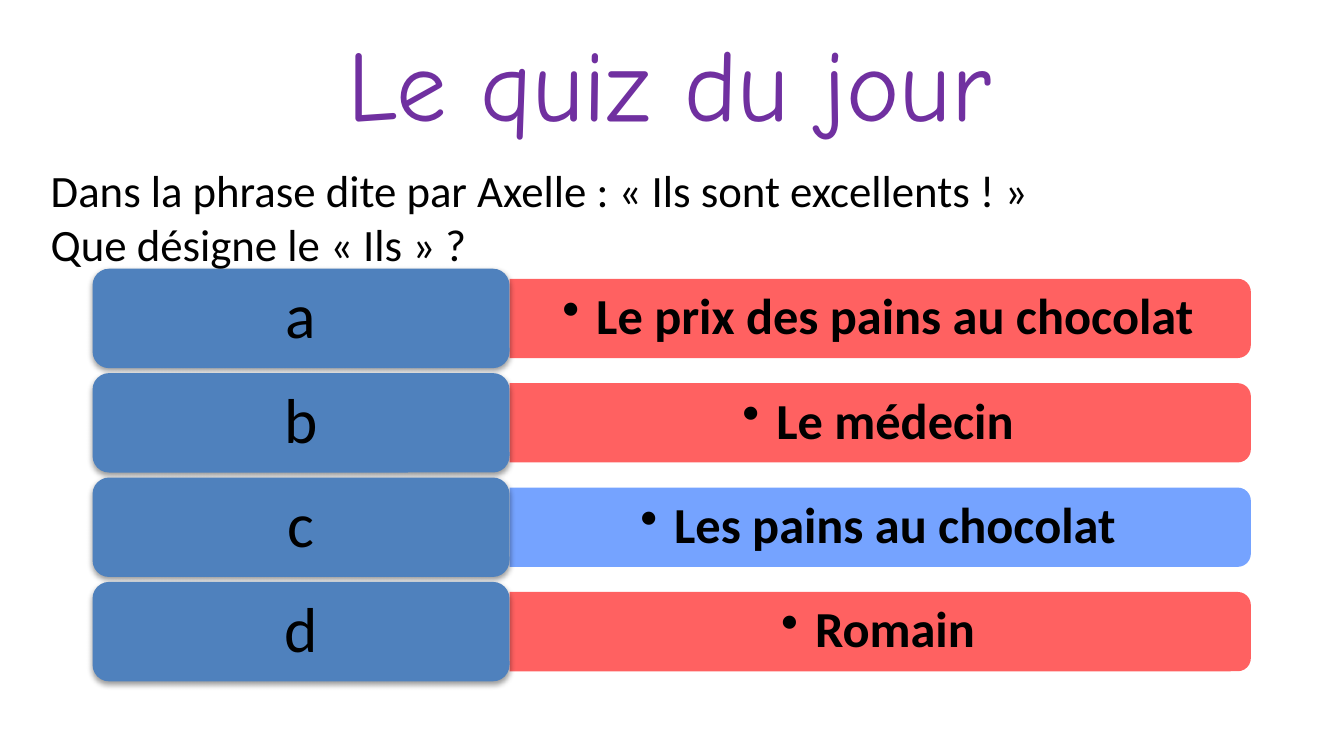
from lxml import etree
from pptx import Presentation
from pptx.dml.color import RGBColor
from pptx.enum.shapes import MSO_SHAPE
from pptx.enum.text import MSO_ANCHOR, PP_ALIGN
from pptx.oxml.ns import qn
from pptx.util import Cm, Pt

CARD, BAR = MSO_SHAPE.ROUNDED_RECTANGLE, MSO_SHAPE.ROUND_2_SAME_RECTANGLE
MIDDLE, TOP = MSO_ANCHOR.MIDDLE, MSO_ANCHOR.TOP
CENTER, LEFT = PP_ALIGN.CENTER, PP_ALIGN.LEFT
COLORS = {"title": "7030A0", "text": "000000", "card": "4F81BD",
          "wrong": "FF5050", "right": "6699FF", "shadow": "000000"}
TITLE = {"name": "Comic Neue", "size": Pt(54)}
QUESTION = {"name": "Calibri", "size": Pt(24)}
LETTER = {"name": "Calibri", "size": Pt(34)}
ANSWER = {"name": "Calibri", "size": Pt(27), "bold": True}
ANSWERS = [("a", "Le prix des pains au chocolat", "wrong"),
           ("b", "Le médecin", "wrong"),
           ("c", "Les pains au chocolat", "right"),
           ("d", "Romain", "wrong")]


def add_child(parent, tag, **attrs):
    """Append a drawing element with the given attributes."""
    return etree.SubElement(parent, qn(tag), {k: str(v) for k, v in attrs.items()})


def write(sp, lines, fmt, color="text", align=CENTER, anchor=MIDDLE, spacing=1.0):
    """Fill a shape with formatted lines and return its paragraphs."""
    tf = sp.text_frame
    tf.word_wrap, tf.vertical_anchor = True, anchor
    tf.text = "\n".join(lines)
    for p in tf.paragraphs:
        p.alignment, p.line_spacing = align, spacing
        font = p.runs[0].font
        font.color.rgb = RGBColor.from_string(COLORS[color])
        for name, value in fmt.items():
            setattr(font, name, value)
    return tf.paragraphs


def add_text(slide, box, lines, fmt, **options):
    """Add a text box, box being left, top, width and height in cm."""
    return write(slide.shapes.add_textbox(*map(Cm, box)), lines, fmt, **options)


def add_block(slide, kind, box, color):
    """Add a plain filled shape without outline or shadow."""
    sp = slide.shapes.add_shape(kind, *map(Cm, box))
    sp.shadow.inherit = False
    sp.fill.solid()
    sp.fill.fore_color.rgb = RGBColor.from_string(COLORS[color])
    sp.line.fill.background()
    return sp


def add_bar(slide, box, text, color):
    """Add an answer bar rounded on its right side, with a bulleted answer."""
    x, y, w, h = box
    sp = add_block(slide, BAR, (x + (w - h) / 2, y + (h - w) / 2, h, w), color)
    sp.rotation = 90
    add_child(sp.fill.fore_color._xFill[0], "a:alpha", val=90000)
    p = add_text(slide, (x, y + 0.08, w - 0.08, h - 0.16), [text], ANSWER, spacing=0.9)[0]
    pPr = p._p.get_or_add_pPr()
    pPr.set("marL", str(Cm(0.64)))
    pPr.set("indent", str(-Cm(0.64)))
    add_child(pPr, "a:buChar", char="•")


def add_card(slide, box, letter):
    """Add a shadowed card that holds the letter of an answer."""
    sp = add_block(slide, CARD, box, "card")
    shadow = add_child(sp._element.spPr.find(qn("a:effectLst")), "a:outerShdw",
                       blurRad=Pt(3.1), dist=Pt(1.6), dir=5400000, rotWithShape=0)
    clr = add_child(shadow, "a:srgbClr", val=COLORS["shadow"])
    add_child(clr, "a:alpha", val=38000)
    write(sp, [letter], LETTER, spacing=0.9)


def add_answers(slide, box):
    """Stack the answer rows evenly in the box."""
    x, y, w, h = box
    card_w, card_h, bar_h = 0.36 * w, 1.88, 1.5
    pitch = (h - card_h) / (len(ANSWERS) - 1)
    for i, (letter, text, color) in enumerate(ANSWERS):
        top = y + i * pitch
        bar = (x + card_w, top + (card_h - bar_h) / 2, w - card_w, bar_h)
        add_bar(slide, bar, text, color)
        add_card(slide, (x, top, card_w, card_h), letter)


def main():
    """Build the quiz slide."""
    prs = Presentation()
    prs.slide_width, prs.slide_height = Cm(25.4), Cm(14.29)
    slide = prs.slides.add_slide(prs.slide_layouts[6])
    add_text(slide, (1.7, 0.53, 21.9, 2), ["Le quiz du jour"], TITLE, color="title")
    add_answers(slide, (1.75, 5.08, 21.89, 7.8))
    add_text(slide, (0.71, 2.95, 20.5, 2.31),
             ["Dans la phrase dite par Axelle : «\u00a0Ils sont excellents !\u00a0»",
              "Que désigne le «\u00a0Ils\u00a0» ?"], QUESTION, align=LEFT, anchor=TOP)
    prs.save("out.pptx")


if __name__ == "__main__":
    main()
